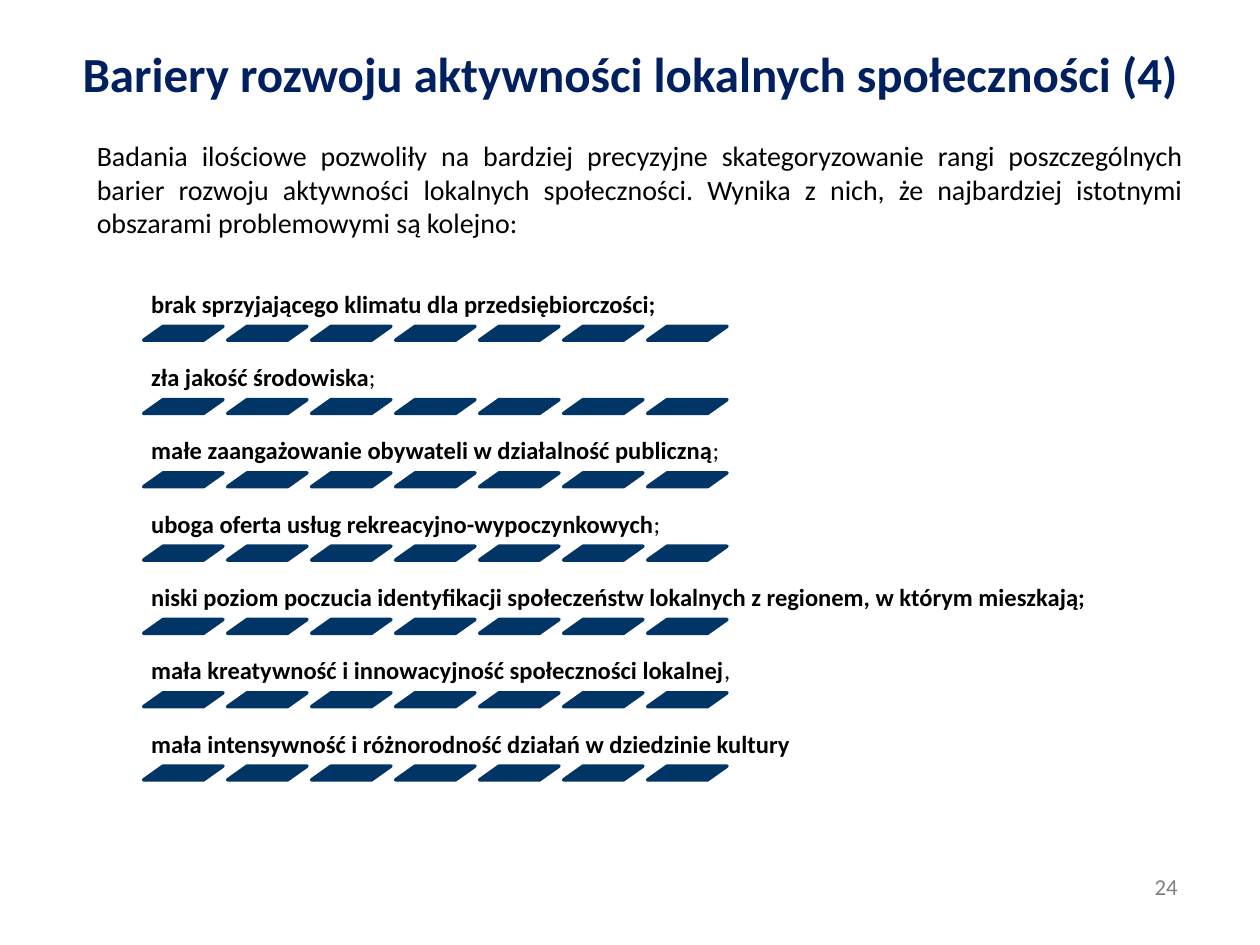
from pptx import Presentation
from pptx.dml.color import RGBColor
from pptx.enum.shapes import MSO_SHAPE
from pptx.enum.text import MSO_ANCHOR, PP_ALIGN
from pptx.util import Inches, Pt

PARALLELOGRAM = MSO_SHAPE.PARALLELOGRAM
TOP, BOTTOM = MSO_ANCHOR.TOP, MSO_ANCHOR.BOTTOM
LEFT, CENTER, JUSTIFY = PP_ALIGN.LEFT, PP_ALIGN.CENTER, PP_ALIGN.JUSTIFY

FONT = "Calibri"
COLORS = {"title": "002060", "text": "000000", "number": "808080", "stripe": "013565"}

TITLE = "Bariery rozwoju aktywności lokalnych społeczności (4)"
INTRO = (
    "Badania ilościowe pozwoliły na bardziej precyzyjne skategoryzowanie rangi "
    "poszczególnych barier rozwoju aktywności lokalnych społeczności. Wynika z nich, "
    "że najbardziej istotnymi obszarami problemowymi są kolejno:"
)

# Bold wording, regular closing mark, label width
BARRIERS = [
    ("brak sprzyjającego klimatu dla przedsiębiorczości;", "", 6.76),
    ("zła jakość środowiska", ";", 4.73),
    ("małe zaangażowanie obywateli w działalność publiczną", ";", 6.71),
    ("uboga oferta usług rekreacyjno-wypoczynkowych", ";", 4.73),
    ("niski poziom poczucia identyfikacji społeczeństw lokalnych z regionem, "
     "w którym mieszkają;", "", 7.95),
    ("mała kreatywność i innowacyjność społeczności lokalnej", ",", 6.14),
    ("mała intensywność i różnorodność działań w dziedzinie kultury", "", 6.73),
]

LIST_LEFT, FIRST_TOP, LAST_TOP = 1.14, 2.16, 5.65
ROW_PITCH = (LAST_TOP - FIRST_TOP) / (len(BARRIERS) - 1)
LABEL_HEIGHT = 0.43
STRIPES, STRIPE_PITCH = 7, 4 / 6


def add_text(slide, box, runs, size, color, align=LEFT, anchor=TOP, inset=None):
    """Add one paragraph; runs holds (wording, bold) pairs."""
    frame = slide.shapes.add_textbox(*map(Inches, box)).text_frame
    frame.word_wrap = True
    frame.vertical_anchor = anchor
    if inset is not None:
        frame.margin_left = frame.margin_right = Inches(inset)
        frame.margin_top = frame.margin_bottom = Inches(inset)
    paragraph = frame.paragraphs[0]
    paragraph.alignment = align
    for wording, bold in runs:
        run = paragraph.add_run()
        run.text = wording
        run.font.name = FONT
        run.font.size = Pt(size)
        run.font.bold = bold
        run.font.color.rgb = RGBColor.from_string(COLORS[color])
    return paragraph


def add_stripe(slide, left, top):
    stripe = slide.shapes.add_shape(
        PARALLELOGRAM, Inches(left), Inches(top), Inches(0.63), Inches(0.11))
    stripe.adjustments[0] = 1.41
    stripe.shadow.inherit = False
    color = RGBColor.from_string(COLORS["stripe"])
    stripe.fill.solid()
    stripe.fill.fore_color.rgb = color
    stripe.line.color.rgb = color
    stripe.line.width = Pt(2)


def add_barrier(slide, top, wording, mark, width):
    runs = [(wording, True)] + ([(mark, False)] if mark else [])
    label = add_text(slide, (LIST_LEFT, top, width, LABEL_HEIGHT), runs, 14, "text",
                     anchor=BOTTOM, inset=0.06)
    label.line_spacing = 0.9
    for column in range(STRIPES):
        add_stripe(slide, LIST_LEFT + column * STRIPE_PITCH, top + LABEL_HEIGHT)


def main():
    prs = Presentation()
    prs.slide_width, prs.slide_height = Inches(10), Inches(7.5)
    slide = prs.slides.add_slide(prs.slide_layouts[6])

    # Page number, title and introduction
    add_text(slide, (8.86, 6.88, 0.79, 0.32), [("24", False)], 13, "number", CENTER)
    add_text(slide, (0.5, 0.3, 9, 0.93), [(TITLE, True)], 28, "title", CENTER)
    add_text(slide, (0.67, 1.05, 8.82, 0.91), [(INTRO, False)], 16, "text", JUSTIFY)

    # Ranked barriers, each underlined by a row of stripes
    for row, (wording, mark, width) in enumerate(BARRIERS):
        add_barrier(slide, FIRST_TOP + row * ROW_PITCH, wording, mark, width)

    prs.save("out.pptx")


if __name__ == "__main__":
    main()
